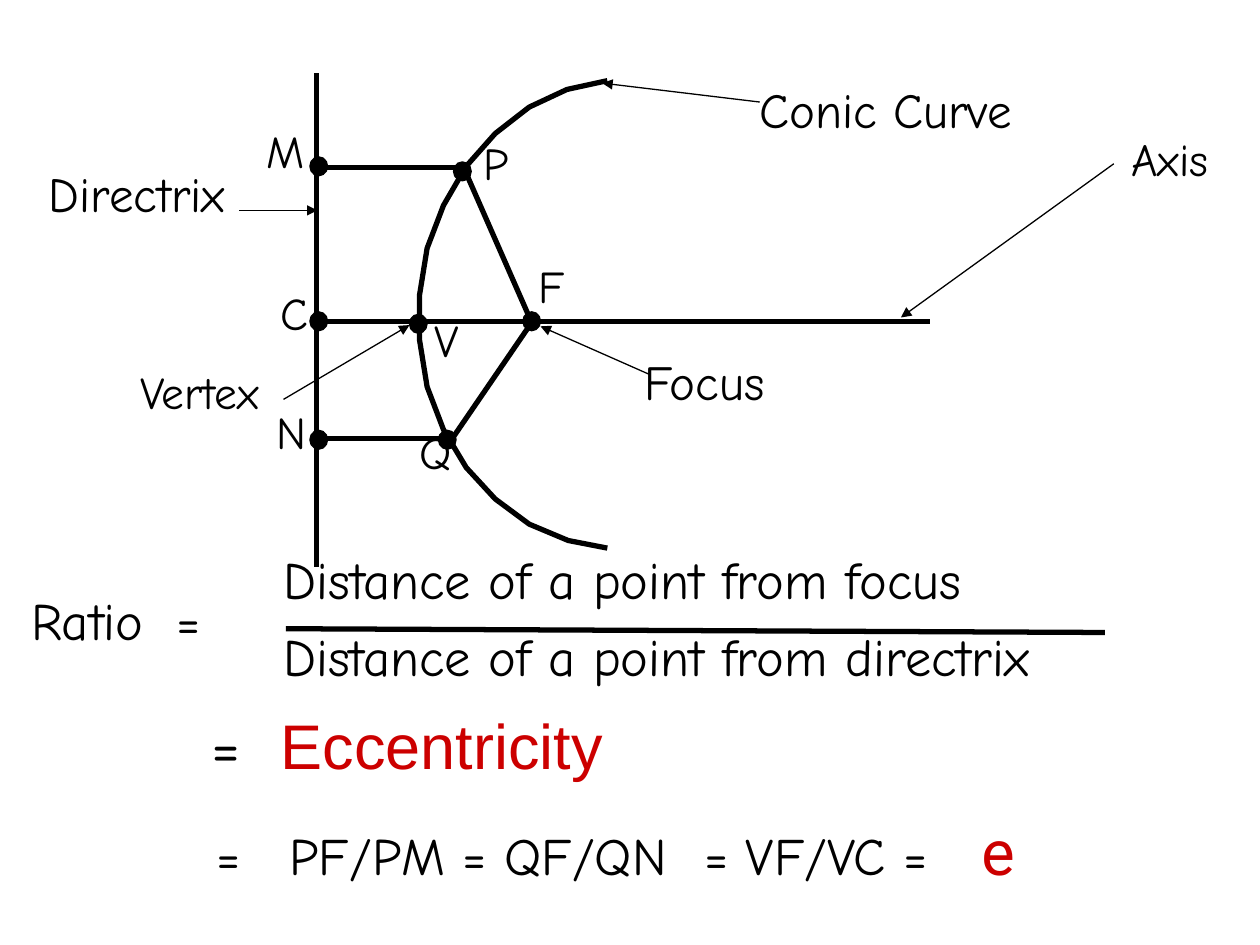
from dataclasses import dataclass

from lxml.etree import SubElement
from pptx import Presentation
from pptx.dml.color import RGBColor
from pptx.enum.shapes import MSO_CONNECTOR, MSO_SHAPE
from pptx.enum.text import MSO_AUTO_SIZE, PP_ALIGN
from pptx.oxml.ns import qn
from pptx.util import Inches, Pt


@dataclass(frozen=True)
class Theme:
    ink: RGBColor = RGBColor(0x00, 0x00, 0x00)
    accent: RGBColor = RGBColor(0xCC, 0x00, 0x00)
    hand: str = "Comic Neue"
    sans: str = "Arial"
    symbol: str = "Roboto"
    point: int = 26
    caption: int = 28
    formula: int = 30
    result: int = 36
    heavy: float = 3
    thin: float = 0.75


THEME = Theme()
INK = {"name": THEME.hand, "color": THEME.ink}
POINT = {**INK, "size": THEME.point}
CAPTION = {**INK, "size": THEME.caption}
FORMULA = {**INK, "size": THEME.formula}
RESULT = {**INK, "size": THEME.result}
ECCENTRICITY = {"name": THEME.sans, "color": THEME.accent, "size": THEME.result}
SYMBOL = {**ECCENTRICITY, "name": THEME.symbol}


def style_font(font, style):
    values = {"name": style["name"], "size": Pt(style["size"])}
    for attribute, value in values.items():
        setattr(font, attribute, value)
    font.color.rgb = style["color"]


def style_line(line, width):
    line.color.rgb = THEME.ink
    line.width = Pt(width)


@dataclass
class Region:
    """Draws on a slide in inches measured from its own origin."""
    slide: object
    left: float
    top: float

    def place(self, x, y):
        return Inches(self.left + x), Inches(self.top + y)

    def text(self, box, runs, align=PP_ALIGN.LEFT, spacing=None, tabs=()):
        x, y, width, height = box
        frame = self.slide.shapes.add_textbox(
            *self.place(x, y), Inches(width), Inches(height)).text_frame
        frame.word_wrap = True
        frame.auto_size = MSO_AUTO_SIZE.SHAPE_TO_FIT_TEXT
        paragraph = frame.paragraphs[0]
        paragraph.alignment = align
        if spacing:
            paragraph.line_spacing = spacing
        for wording, style in runs:
            run = paragraph.add_run()
            run.text = wording
            style_font(run.font, style)
        if tabs:
            stops = SubElement(paragraph._p.get_or_add_pPr(), qn("a:tabLst"))
            for position in tabs:
                SubElement(stops, qn("a:tab"), pos=str(Inches(position)), algn="l")

    def line(self, start, end, width=THEME.heavy, arrow=False):
        connector = self.slide.shapes.add_connector(
            MSO_CONNECTOR.STRAIGHT, *self.place(*start), *self.place(*end))
        style_line(connector.line, width)
        if arrow:
            SubElement(connector.line._get_or_add_ln(), qn("a:tailEnd"), type="triangle")
        SubElement(connector._element.spPr, qn("a:effectLst"))

    def curve(self, points):
        start, *rest = [self.place(*point) for point in points]
        builder = self.slide.shapes.build_freeform(*start)
        builder.add_line_segments(rest, close=False)
        outline = builder.convert_to_shape()
        outline.shadow.inherit = False
        outline.fill.background()
        style_line(outline.line, THEME.heavy)

    def dot(self, x, y, width=0.14, height=0.15):
        mark = self.slide.shapes.add_shape(
            MSO_SHAPE.OVAL, *self.place(x - width / 2, y - height / 2),
            Inches(width), Inches(height))
        mark.shadow.inherit = False
        mark.fill.solid()
        mark.fill.fore_color.rgb = THEME.ink
        style_line(mark.line, THEME.thin)


def draw_conic(slide, left, top):
    """Diagram whose origin is C, where the axis meets the directrix."""
    conic = Region(slide, left, top)
    segments = [
        ((-0.02, -1.97), (-0.02, 1.95)),  # directrix
        ((-0.03, 0), (4.85, 0)),          # axis
        ((-0.02, -1.22), (1.15, -1.22)),  # MP
        ((1.15, -1.22), (1.69, 0.01)),    # PF
        ((-0.01, 0.93), (1.07, 0.93)),    # NQ
        ((1.71, -0.02), (1.06, 0.93)),    # FQ
    ]
    for start, end in segments:
        conic.line(start, end)

    conic.curve([
        (2.29, -1.91), (1.97, -1.84), (1.67, -1.7), (1.4, -1.49),
        (1.17, -1.23), (0.99, -0.92), (0.86, -0.58), (0.8, -0.21),
        (0.8, 0.15), (0.86, 0.52), (0.99, 0.86), (1.17, 1.16),
        (1.4, 1.41), (1.67, 1.61), (1.98, 1.74), (2.29, 1.8),
    ])

    # name: dot centre, then left, top and width of its letter
    points = {
        "M": ((0, -1.23), (-0.59, -1.62, 0.65)),
        "C": ((0, 0), (-0.53, -0.34, 0.68)),
        "N": ((0, 0.94), (-0.45, 0.61, 0.46)),
        "P": ((1.14, -1.19), (1.18, -1.53, 0.46)),
        "V": ((0.79, 0.02), (0.75, -0.12, 0.46)),
        "Q": ((1.02, 0.94), (0.55, 0.77, 0.75)),
        "F": ((1.69, 0), (1.55, -0.55, 0.6)),
    }
    for name, (centre, box) in points.items():
        conic.dot(*centre)
        align = PP_ALIGN.RIGHT if name == "V" else PP_ALIGN.CENTER
        conic.text((*box, 0.66), [(name, POINT)], align)

    # caption, style, left, top and width, then its arrow
    callouts = [
        ("Conic Curve", CAPTION, (3.25, -1.97, 2.5), (3.5, -1.74), (2.25, -1.89)),
        ("Axis", POINT, (6.21, -1.56, 1.09), (6.31, -1.25), (4.62, -0.03)),
        ("Directrix", CAPTION, (-2.53, -1.3, 2.17), (-0.63, -0.88), (-0.01, -0.88)),
        ("Focus", CAPTION, (2.38, 0.19, 1.36), (2.62, 0.42), (1.76, 0.04)),
        ("Vertex", POINT, (-1.95, 0.29, 2.01), (-0.28, 0.62), (0.72, 0.03)),
    ]
    for caption, style, box, start, end in callouts:
        conic.text((*box, 0.7), [(caption, style)], PP_ALIGN.CENTER)
        conic.line(start, end, THEME.thin, arrow=True)


def write_ratio(slide, left, top):
    ratio = Region(slide, left, top)
    ratio.text((0, 0.33, 2.08, 0.75), [("Ratio\t=", FORMULA)], tabs=[1.15])
    ratio.text((2, 0, 6.92, 0.75), [("Distance of a point from focus", FORMULA)])
    ratio.line((2.12, 0.7), (8.62, 0.73))
    ratio.text((2, 0.61, 7.83, 0.75), [("Distance of a point from directrix", FORMULA)])
    ratio.text((1.43, 1.27, 5.05, 0.88),
               [("=\t", RESULT), ("Eccentricity", ECCENTRICITY)], tabs=[0.55])
    ratio.text((1.47, 2.18, 6.58, 1.09),
               [("=\tPF/PM = QF/QN\t= VF/VC =\t", FORMULA), ("e", SYMBOL)],
               spacing=0.9, tabs=[0.58, 3.87, 6.07])


def main():
    deck = Presentation()
    deck.slide_width, deck.slide_height = Inches(10), Inches(7.5)
    slide = deck.slides.add_slide(deck.slide_layouts[6])
    draw_conic(slide, 2.53, 2.55)
    write_ratio(slide, 0.15, 4.29)
    deck.save("out.pptx")


if __name__ == "__main__":
    main()
